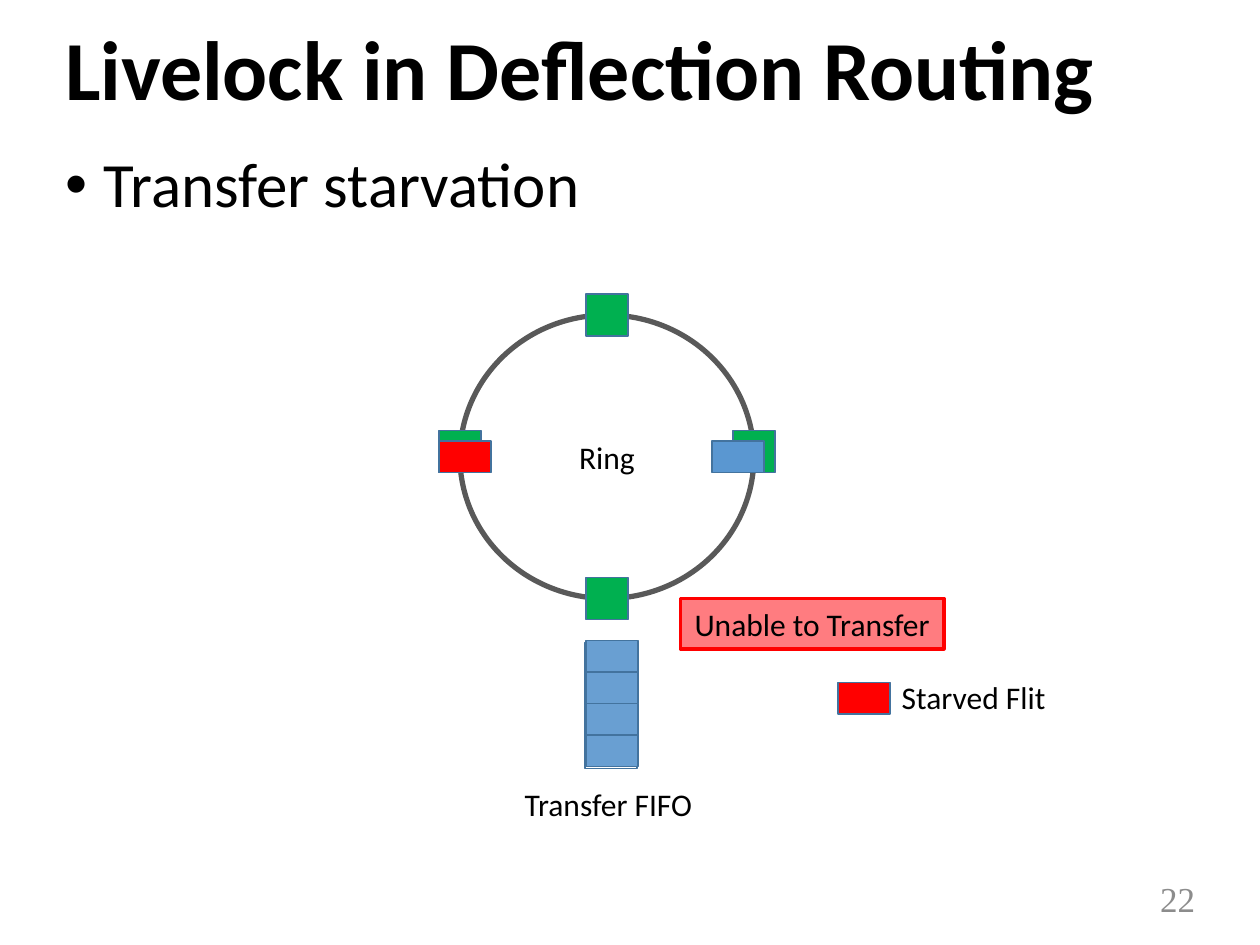
from pptx import Presentation
from pptx.dml.color import RGBColor
from pptx.enum.shapes import MSO_SHAPE
from pptx.enum.text import MSO_ANCHOR, MSO_AUTO_SIZE, PP_ALIGN
from pptx.util import Pt

PX = 7620  # EMU per px, 120 px to the inch
RECT, OVAL = MSO_SHAPE.RECTANGLE, MSO_SHAPE.OVAL
LEFT, CENTER, RIGHT = PP_ALIGN.LEFT, PP_ALIGN.CENTER, PP_ALIGN.RIGHT
TOP, MIDDLE = MSO_ANCHOR.TOP, MSO_ANCHOR.MIDDLE

BLACK = RGBColor(0x00, 0x00, 0x00)
GRAY = RGBColor(0x8C, 0x8C, 0x8C)
RING_GRAY = RGBColor(0x59, 0x59, 0x59)
EDGE = RGBColor(0x43, 0x73, 0x9E)
GREEN = RGBColor(0x00, 0xB0, 0x50)
RED = RGBColor(0xFF, 0x00, 0x00)
PINK = RGBColor(0xFF, 0x7C, 0x80)
BLUE = RGBColor(0x5A, 0x97, 0xD1)
FIFO_BLUE = RGBColor(0x69, 0x9F, 0xD2)

NODE = 40
FLIT_W, FLIT_H = 50, 30


def emu(*px):
    return [v * PX for v in px]


def write(sp, text, size=18, font="Calibri", color=BLACK, bold=False,
          align=LEFT, anchor=TOP, wrap=False, spacing=None):
    tf = sp.text_frame
    tf.word_wrap = wrap
    tf.auto_size = MSO_AUTO_SIZE.NONE
    tf.vertical_anchor = anchor
    p = tf.paragraphs[0]
    p.alignment = align
    if spacing:
        p.line_spacing = spacing
    r = p.add_run()
    r.text = text
    r.font.size, r.font.name, r.font.bold = Pt(size), font, bold
    r.font.color.rgb = color
    return p


def add_label(shapes, box, text, **fmt):
    write(shapes.add_textbox(*emu(*box)), text, **fmt)


def add_box(shapes, box, fill=None, line=EDGE, width=1, kind=RECT):
    sp = shapes.add_shape(kind, *emu(*box))
    sp.shadow.inherit = False
    if fill is None:
        sp.fill.background()
    else:
        sp.fill.solid()
        sp.fill.fore_color.rgb = fill
    sp.line.color.rgb = line
    sp.line.width = Pt(width)
    return sp


def add_flit(shapes, x, y, fill=None):
    add_box(shapes, (x, y, FLIT_W, FLIT_H), fill)


def add_headings(s):
    title, body = s.placeholders
    for sp, box in ((title, (50, 20, 1100, 100)), (body, (50, 140, 1100, 740))):
        sp.left, sp.top, sp.width, sp.height = emu(*box)
    write(title, "Livelock in Deflection Routing", size=48, bold=True,
          anchor=MIDDLE, wrap=True, spacing=0.9)
    p = write(body, "Transfer starvation", size=36, wrap=True, spacing=0.9)
    p.space_before = Pt(10)
    pPr = p._p.get_or_add_pPr()
    pPr.set("marL", str(37 * PX))
    pPr.set("indent", str(-37 * PX))


def add_ring(s, x, y, w, h):
    shapes = s.shapes.add_group_shape().shapes
    ring = add_box(shapes, (x, y, w, h), line=RING_GRAY, width=3, kind=OVAL)
    write(ring, "Ring", align=CENTER, anchor=MIDDLE, wrap=True)
    # Nodes at the bottom, top, left and right of the ring
    mid_x, mid_y = x + w // 2, y + h // 2 - 5
    for cx, cy in ((mid_x, y + h), (mid_x, y), (x, mid_y), (x + w, mid_y)):
        add_box(shapes, (cx - NODE // 2, cy - NODE // 2, NODE, NODE), GREEN)


def add_fifo(s, x, y, slots=4, fill=None):
    for i in range(slots):
        add_flit(s.shapes, x, y + i * FLIT_H, fill)


def add_legend(s, x, y):
    add_flit(s.shapes, x, y + 10, RED)
    add_label(s.shapes, (x + 49, y, 162, 48), "Starved Flit")


def main():
    prs = Presentation()
    prs.slide_width, prs.slide_height = emu(1200, 900)
    s = prs.slides.add_slide(prs.slide_layouts[1])

    add_headings(s)
    add_label(s.shapes, (1060, 832, 90, 48), "22", size=20,
              font="Times New Roman", color=GRAY, align=RIGHT, anchor=MIDDLE,
              wrap=True)

    # Empty FIFO slots and captions
    add_fifo(s, 557, 612)
    add_label(s.shapes, (487, 742, 185, 48), "Transfer FIFO", align=CENTER)
    notice = add_box(s.shapes, (648, 570, 251, 48), PINK, line=RED, width=2)
    write(notice, "Unable to Transfer", align=CENTER)
    add_legend(s, 798, 640)

    # Ring, then the flits on it and in the FIFO
    add_ring(s, 438, 300, 280, 270)
    add_flit(s.shapes, 678, 420, BLUE)
    add_fifo(s, 558, 610, fill=FIFO_BLUE)
    add_flit(s.shapes, 418, 420, RED)

    prs.save("out.pptx")


if __name__ == "__main__":
    main()
